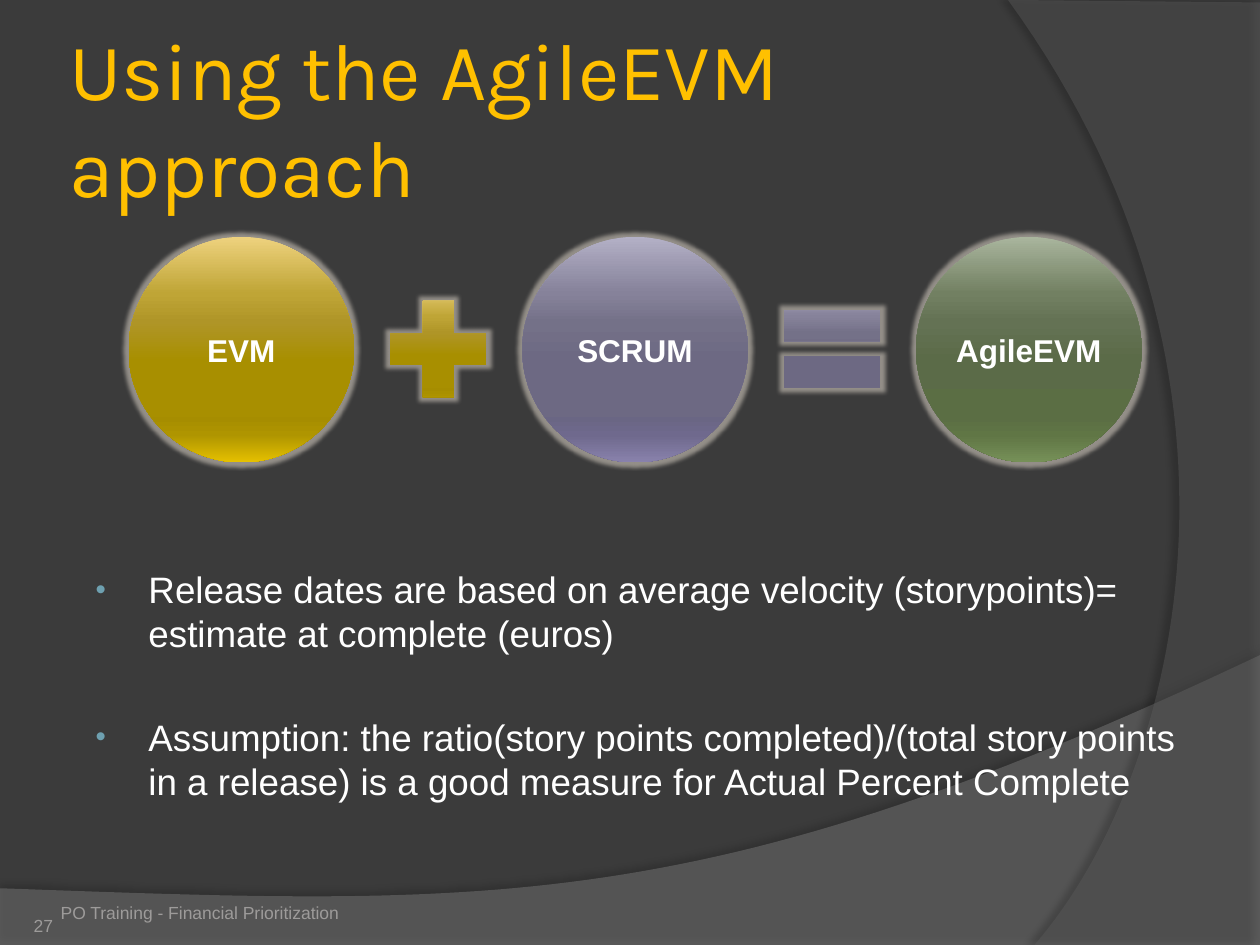
from dataclasses import dataclass

from lxml import etree
from pptx import Presentation
from pptx import util as u
from pptx.dml.color import RGBColor
from pptx.enum import shapes, text
from pptx.oxml.ns import qn


@dataclass(frozen=True)
class Theme:
    """Colours, fonts and type sizes of the deck."""
    background: str = "3B3B3B"
    lower_wave: str = "7F7F7F"
    right_wave: str = "5E5E5E"
    shadow: str = "000000"
    glow: str = "FFF5E6"
    heading: str = "FFC000"
    body: str = "FFFFFF"
    bullet: str = "6EA0B0"
    muted: str = "9D9B9A"
    gold: tuple = ("EED27E", "BFA536", "AF9527", "A88F00", "A68D00", "AF9500", "E6C100")
    violet: tuple = ("B3B0C6", "86829A", "747188", "6D6983", "6A6684", "6F698D", "8982AC")
    green: tuple = ("A9B59D", "728062", "647254", "5B6B48", "5B6E44", "607645", "769058")
    stops: tuple = (0, 25, 38, 55, 80, 88, 100)
    heading_font: str = "Karla"
    body_font: str = "Arial"
    heading_size: int = 46
    body_size: int = 21
    label_size: int = 18
    footer_size: int = 10


def add_node(parent, tag, **attributes):
    """Append a DrawingML element and return it."""
    return etree.SubElement(parent, qn(f"a:{tag}"), {k: str(v) for k, v in attributes.items()})


def add_color(parent, color, alpha=100):
    """Append an RGB colour with its opacity in percent."""
    node = add_node(parent, "srgbClr", val=color)
    if alpha < 100:
        add_node(node, "alpha", val=alpha * 1000)


def bezier(start, first, second, end, steps=60):
    """Return points along a cubic curve, without its start."""
    points = []
    for step in range(1, steps + 1):
        t = step / steps
        weights = ((1 - t) ** 3, 3 * t * (1 - t) ** 2, 3 * t * t * (1 - t), t ** 3)
        points.append(tuple(sum(w * p[axis] for w, p in zip(weights, (start, first, second, end)))
                            for axis in (0, 1)))
    return points


class SlideBuilder:
    """Draw styled elements on the current slide."""

    def __init__(self, page, theme):
        self.page, self.theme = page, theme
        page.background.fill.solid()
        page.background.fill.fore_color.rgb = RGBColor.from_string(theme.background)

    def effects(self, shape):
        shape.line.fill.background()
        shape.shadow.inherit = False
        return shape._element.spPr.find(qn("a:effectLst"))

    def wave(self, points, color, alpha, shadow_alpha, distance, direction):
        start, *rest = [tuple(u.Inches(v) for v in point) for point in points]
        builder = self.page.shapes.build_freeform(*start)
        builder.add_line_segments(rest, close=True)
        shape = builder.convert_to_shape()
        shape.fill.solid()
        shape.fill.fore_color.rgb = RGBColor.from_string(color)
        fill_color = shape._element.spPr.find(qn("a:solidFill"))[0]
        add_node(fill_color, "alpha", val=alpha * 1000)
        shadow = add_node(self.effects(shape), "outerShdw", blurRad=u.Pt(4), dist=u.Pt(distance),
                          dir=direction * 60000, algn="ctr", rotWithShape=0)
        add_color(shadow, self.theme.shadow, shadow_alpha)

    def glossy(self, kind, left, top, size, colors):
        shape = self.page.shapes.add_shape(kind, *map(u.Inches, (left, top, size, size)))
        shape.fill.gradient()
        shape.fill.gradient_angle = 270
        stops = shape._element.spPr.find(qn("a:gradFill")).find(qn("a:gsLst"))
        for stop in list(stops):
            stops.remove(stop)
        for position, color in zip(self.theme.stops, colors):
            add_color(add_node(stops, "gs", pos=position * 1000), color)
        add_color(add_node(self.effects(shape), "glow", rad=u.Pt(5)), self.theme.glow, 45)
        return shape

    def set_text(self, box, lines, size, color, font=None, align=text.PP_ALIGN.LEFT,
                 anchor=text.MSO_ANCHOR.TOP, insets=(0.1, 0.05, 0.1, 0.05), bold=False):
        frame = box.text_frame
        frame.word_wrap = True
        frame.vertical_anchor = anchor
        (frame.margin_left, frame.margin_top,
         frame.margin_right, frame.margin_bottom) = map(u.Inches, insets)
        frame.text = "\n".join(lines)
        for paragraph in frame.paragraphs:
            paragraph.alignment = align
            paragraph.font.name = font or self.theme.body_font
            paragraph.font.size = u.Pt(size)
            paragraph.font.bold = bold
            paragraph.font.color.rgb = RGBColor.from_string(color)
        return frame

    def label(self, place, words, size, color, **style):
        box = self.page.shapes.add_textbox(*map(u.Inches, place))
        return self.set_text(box, words, size, color, **style)

    def bullets(self, place, items, gap):
        frame = self.label(place, items, self.theme.body_size, self.theme.body)
        for index, paragraph in enumerate(frame.paragraphs):
            paragraph.space_before = u.Pt(gap if index else 4)
            properties = paragraph._p.get_or_add_pPr()
            properties.set("marL", str(u.Inches(0.46)))
            properties.set("indent", str(u.Inches(-0.42)))
            marks = etree.Element("marks")
            add_color(add_node(marks, "buClr"), self.theme.bullet)
            add_node(marks, "buSzPct", val=80000)
            add_node(marks, "buFont", typeface=self.theme.body_font)
            add_node(marks, "buChar", char="•")
            for offset, mark in enumerate(list(marks)):
                properties.insert(1 + offset, mark)

    def term(self, left, word, colors):
        circle = self.glossy(shapes.MSO_SHAPE.OVAL, left, 1.88, 1.79, colors)
        self.set_text(circle, [word], self.theme.label_size, self.theme.body, bold=True,
                      align=text.PP_ALIGN.CENTER, anchor=text.MSO_ANCHOR.MIDDLE,
                      insets=(0.03,) * 4)


def main():
    """Build and save the deck."""
    deck = Presentation()
    deck.slide_width, deck.slide_height = u.Inches(10), u.Inches(7.5)
    theme = Theme()
    slide = SlideBuilder(deck.slides.add_slide(deck.slide_layouts[6]), theme)

    lower = [(0, 7.5), (10, 7.5), (10, 5.2)]
    lower += bezier(lower[-1], (5.59, 7.29), (3.91, 7.19), (0, 7.05))
    slide.wave(lower, theme.lower_wave, 45, 35, 3.5, 270)
    right = [(10, 0.02), (10, 7.5), (8.21, 7.5)]
    right += bezier(right[-1], (9.35, 6.19), (10.18, 3), (8, 0))
    slide.wave(right, theme.right_wave, 40, 45, 4, 180)

    slide.label((0.5, 0.3, 8.17, 1.25), ["Using the AgileEVM approach"], theme.heading_size,
                theme.heading, font=theme.heading_font, anchor=text.MSO_ANCHOR.MIDDLE,
                insets=(0.05,) * 4)
    slide.bullets((0.62, 4.45, 8.92, 2.06), [
        "Release dates are based on average velocity (storypoints)= estimate at complete (euros)",
        "Assumption: the ratio(story points completed)/(total story points in a release) "
        "is a good measure for Actual Percent Complete",
    ], gap=34)

    slide.label((0, 6.83, 3.17, 0.5), ["PO Training - Financial Prioritization"],
                theme.footer_size, theme.muted, align=text.PP_ALIGN.CENTER,
                anchor=text.MSO_ANCHOR.BOTTOM, insets=(0, 0.05, 0, 0))
    slide.label((0, 7.26, 0.42, 0.17), ["27"], theme.footer_size, theme.muted,
                align=text.PP_ALIGN.RIGHT, anchor=text.MSO_ANCHOR.BOTTOM, insets=(0,) * 4)

    pitch = 3.125
    palettes = (theme.gold, theme.violet, theme.green)
    for index, (word, colors) in enumerate(zip(("EVM", "SCRUM", "AgileEVM"), palettes)):
        slide.term(1.02 + index * pitch, word, colors)
    operators = (shapes.MSO_SHAPE.MATH_PLUS, shapes.MSO_SHAPE.MATH_EQUAL)
    for index, (kind, colors) in enumerate(zip(operators, palettes)):
        slide.glossy(kind, 2.96 + index * pitch, 2.25, 1.04, colors)

    deck.save("out.pptx")


if __name__ == "__main__":
    main()
